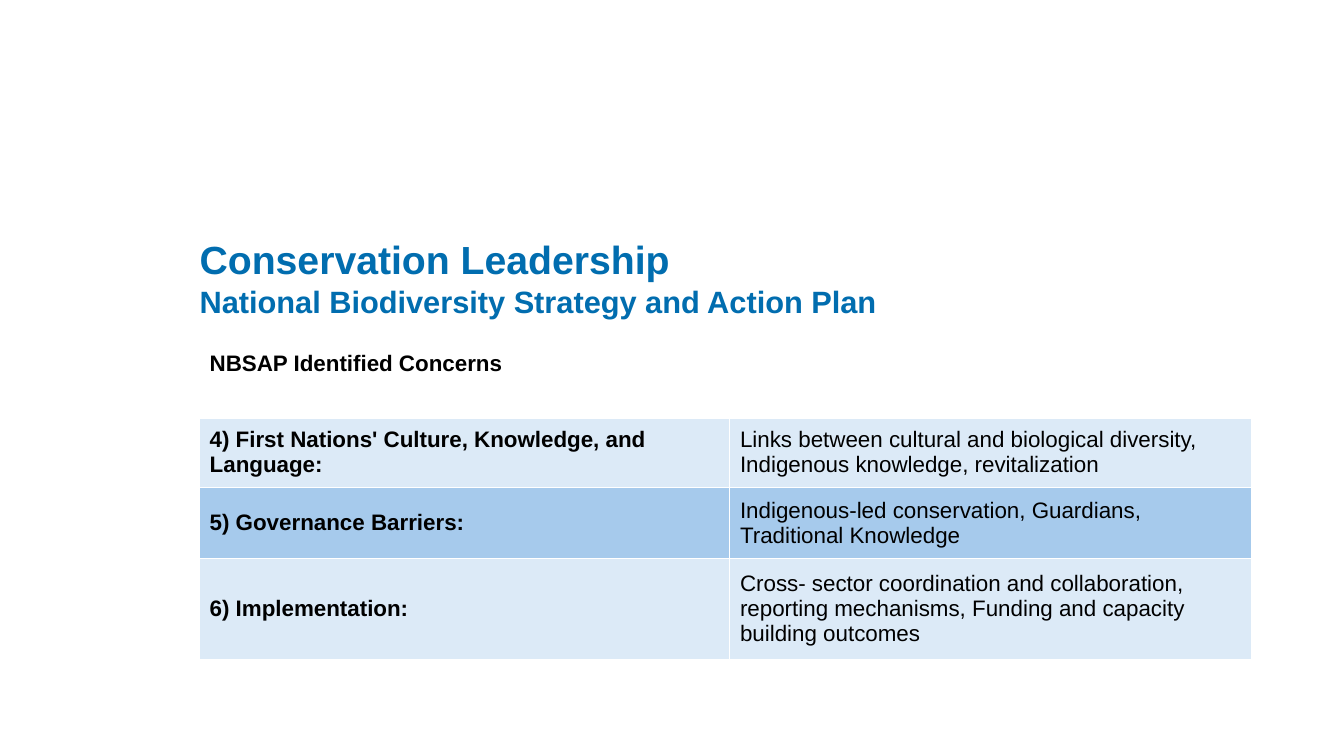
from lxml.etree import SubElement
from pptx import Presentation
from pptx.dml.color import RGBColor
from pptx.enum.text import MSO_ANCHOR, MSO_AUTO_SIZE, PP_ALIGN
from pptx.oxml.ns import qn
from pptx.util import Inches, Pt

BLUE = RGBColor(0x01, 0x6D, 0xAF)
BLACK = RGBColor(0x00, 0x00, 0x00)
WHITE = RGBColor(0xFF, 0xFF, 0xFF)
PALE = RGBColor(0xDC, 0xEA, 0xF7)
SKY = RGBColor(0xA6, 0xCA, 0xEC)

HEADING = "NBSAP Identified Concerns"
CONCERNS = [
    ("4) First Nations' Culture, Knowledge, and Language:",
     "Links between cultural and biological diversity, Indigenous knowledge, revitalization"),
    ("5) Governance Barriers:",
     "Indigenous-led conservation, Guardians, Traditional Knowledge"),
    ("6) Implementation:",
     "Cross- sector coordination and collaboration, reporting mechanisms, "
     "Funding and capacity building outcomes"),
]


class SlideBuilder:
    """Holds the slide and its style, with a method for each kind of element."""

    font = "Arial"
    cell_size = 16
    thin, thick = 0.77, 2.33

    def __init__(self, slide):
        self.slide = slide

    def run(self, paragraph, text, size, color, bold):
        run = paragraph.add_run()
        run.text = text
        run.font.name = self.font
        run.font.size = Pt(size)
        run.font.bold = bold
        run.font.color.rgb = color

    def title(self, left, top, width, height, heading, subheading):
        title = self.slide.shapes.title
        title.left, title.top = Inches(left), Inches(top)
        title.width, title.height = Inches(width), Inches(height)
        frame = title.text_frame
        frame.word_wrap = True
        frame.auto_size = MSO_AUTO_SIZE.NONE
        frame.vertical_anchor = MSO_ANCHOR.MIDDLE
        paragraph = frame.paragraphs[0]
        paragraph.alignment = PP_ALIGN.LEFT
        self.run(paragraph, heading, 28, BLUE, True)
        paragraph.add_line_break()
        self.run(paragraph, subheading, 22, BLUE, True)

    def borders(self, cell, top, bottom):
        properties = cell._tc.get_or_add_tcPr()
        sides = {"lnL": self.thin, "lnR": self.thin, "lnT": top, "lnB": bottom}
        for index, (side, width) in enumerate(sides.items()):
            line = SubElement(properties, qn(f"a:{side}"), w=str(Pt(width)))
            properties.insert(index, line)
            fill = SubElement(line, qn("a:solidFill"))
            SubElement(fill, qn("a:srgbClr"), val=str(WHITE))

    def cell(self, cell, text, bold, fill, anchor):
        cell.vertical_anchor = anchor
        if fill is None:
            cell.fill.background()
        else:
            cell.fill.solid()
            cell.fill.fore_color.rgb = fill
        if text:
            self.run(cell.text_frame.paragraphs[0], text, self.cell_size, BLACK, bold)

    def table(self, left, top, columns, heights, heading, concerns):
        table = self.slide.shapes.add_table(
            len(heights), len(columns), Inches(left), Inches(top),
            Inches(sum(columns)), Inches(sum(heights))).table
        for column, width in zip(table.columns, columns):
            column.width = Inches(width)
        for row, height in zip(table.rows, heights):
            row.height = Inches(height)
        table.cell(0, 0).merge(table.cell(0, 1))
        for column, text in enumerate((heading, "")):
            header = table.cell(0, column)
            self.cell(header, text, True, None, MSO_ANCHOR.TOP)
            self.borders(header, self.thin, self.thick)
        for row, concern in enumerate(concerns, 1):
            for column, text in enumerate(concern):
                cell = table.cell(row, column)
                self.cell(cell, text, column == 0, PALE if row % 2 else SKY, MSO_ANCHOR.MIDDLE)
                self.borders(cell, self.thick if row == 1 else self.thin, self.thin)


def main():
    presentation = Presentation()
    presentation.slide_width = Inches(13.33)
    presentation.slide_height = Inches(7.5)
    builder = SlideBuilder(presentation.slides.add_slide(presentation.slide_layouts[5]))
    builder.table(1.98, 3.44, (5.26, 5.17), (0.7, 0.7, 0.7, 1), HEADING, CONCERNS)
    builder.title(1.88, 1.87, 10.54, 1.76, "Conservation Leadership",
                  "National Biodiversity Strategy and Action Plan")
    presentation.save("out.pptx")


if __name__ == "__main__":
    main()
